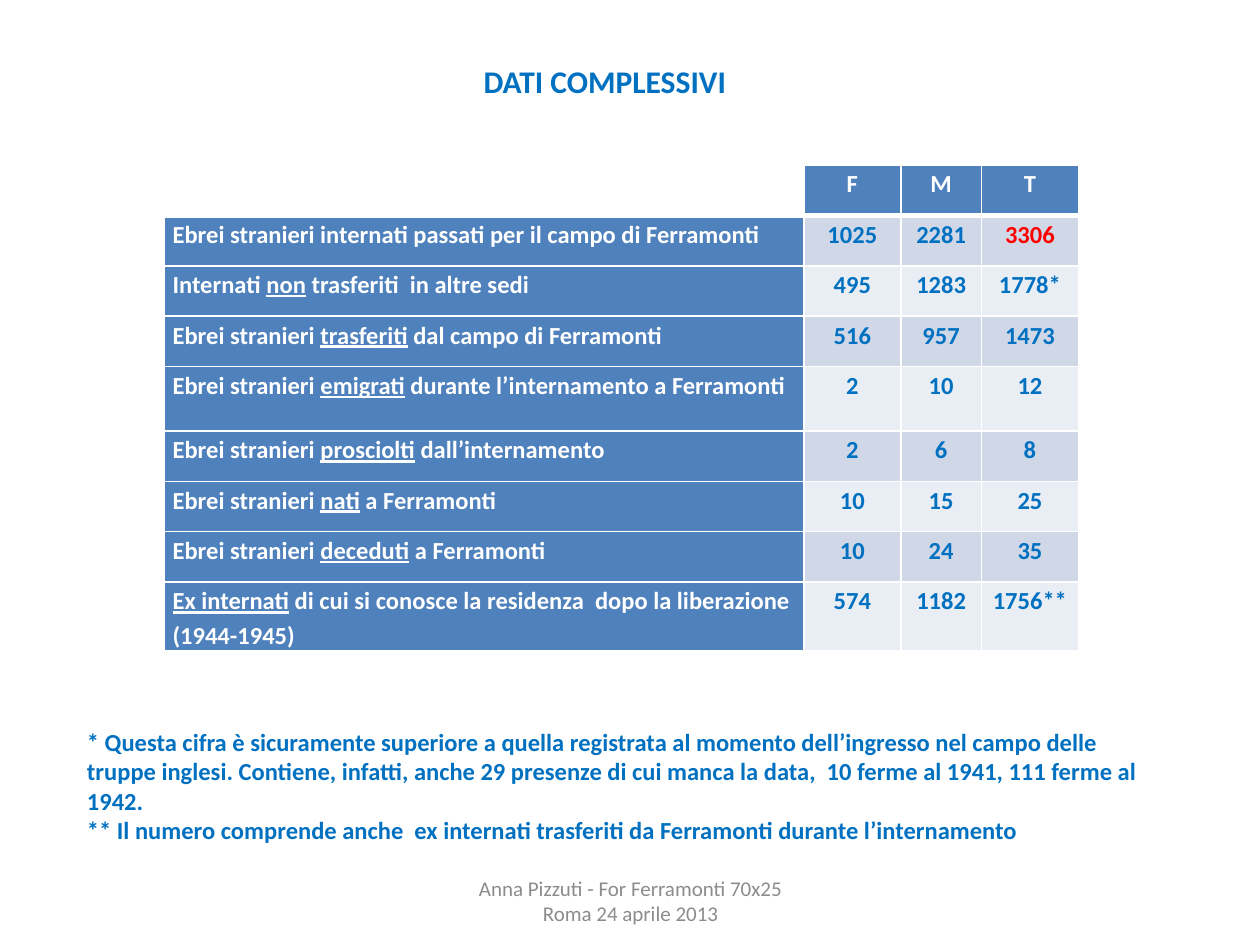
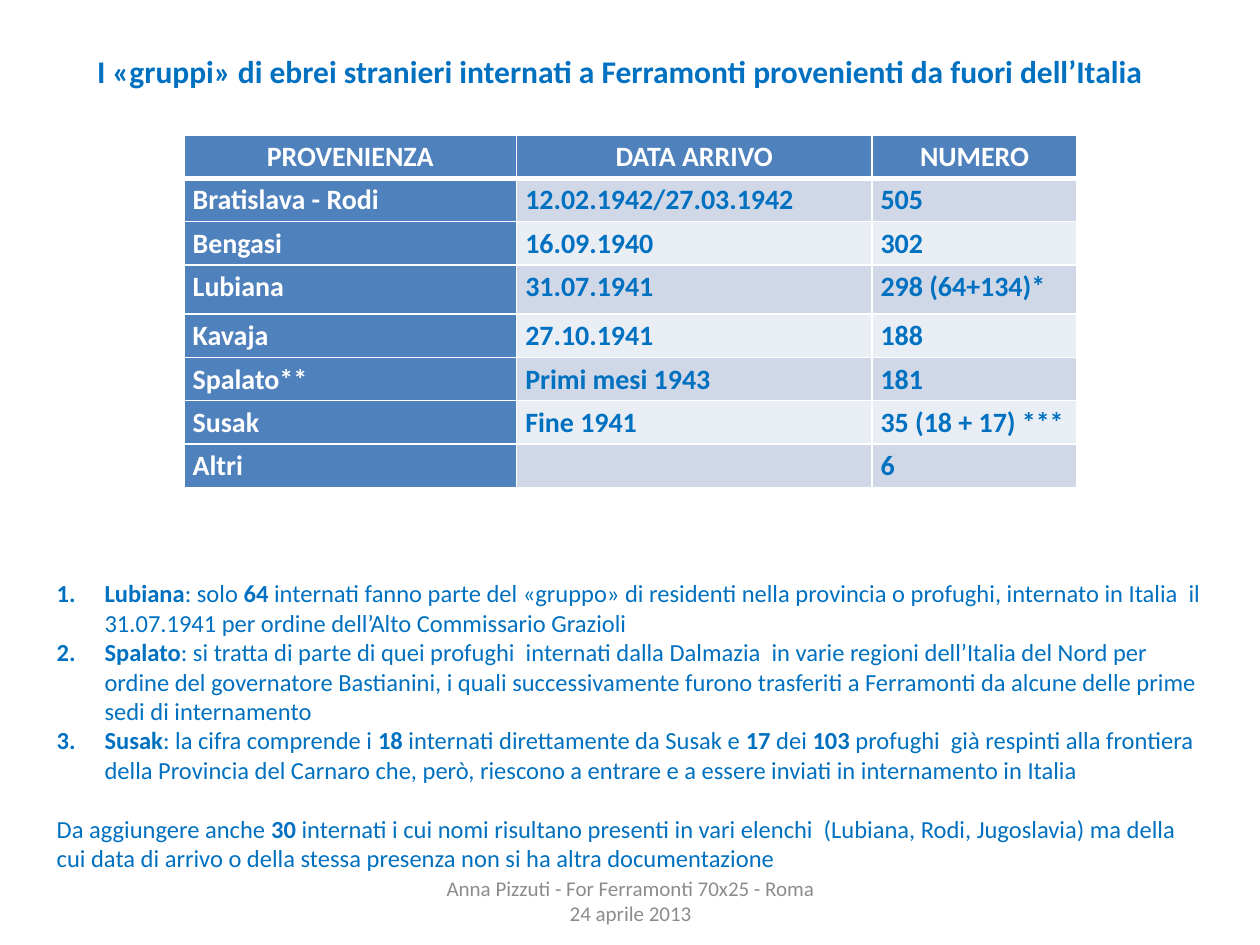
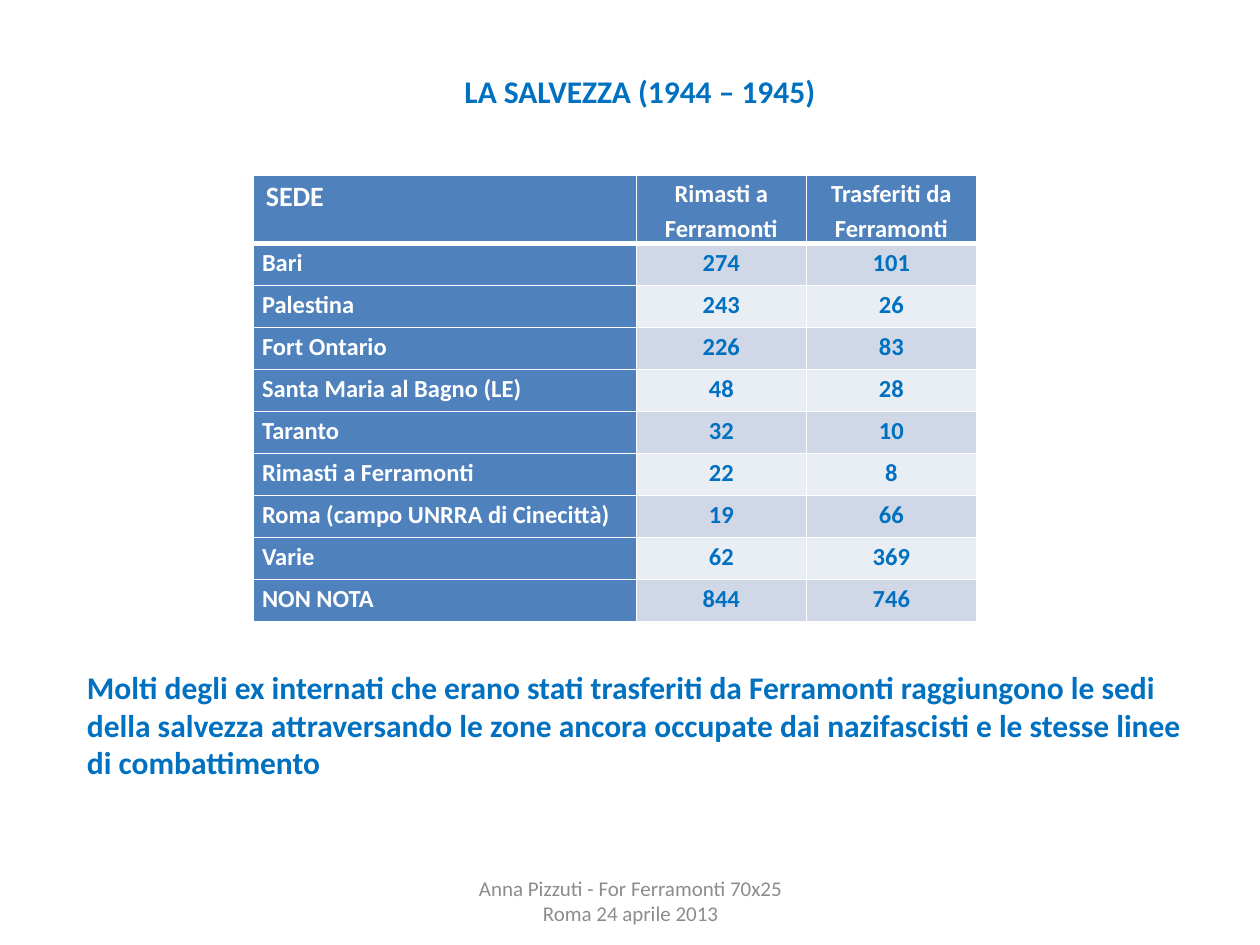
from pptx import Presentation
from pptx.dml.color import RGBColor
from pptx.enum.text import MSO_ANCHOR, MSO_AUTO_SIZE, PP_ALIGN
from pptx.oxml import parse_xml
from pptx.oxml.ns import nsdecls
from pptx.util import Inches, Pt

FONT = "Calibri"
BLUE = "0070C0"
WHITE = "FFFFFF"
RED = "FF0000"
GREY = "8C8C8C"
HEADER = "4F81BD"
BANDS = ("E9EDF4", "D0D8E8")
LEFT, CENTER = PP_ALIGN.LEFT, PP_ALIGN.CENTER


def color(value):
    """Turn a hex string into an RGB colour."""
    return RGBColor.from_string(value)


def write(frame, text, size=14, fill=BLUE, bold=False, underline=False,
          align=LEFT, spacing=1.0, anchor=MSO_ANCHOR.TOP):
    """Fill a frame, one paragraph a line; bars enclose emphasis.

    Emphasis is an underline when underline is True, otherwise bold.
    """
    frame.word_wrap = True
    frame.vertical_anchor = anchor
    for number, line in enumerate(text.split("\n")):
        paragraph = frame.add_paragraph() if number else frame.paragraphs[0]
        paragraph.alignment = align
        paragraph.line_spacing = spacing
        paragraph.space_before = Pt(0)
        for index, part in enumerate(line.split("|")):
            if not part:
                continue
            emphasis = index % 2 == 1
            run = paragraph.add_run()
            run.text = part
            run.font.name = FONT
            run.font.size = Pt(size)
            run.font.color.rgb = color(fill)
            run.font.bold = bold or (emphasis and not underline)
            run.font.underline = emphasis and underline


# Boxes are left, top, width, height in inches.
pages = [
    {
        "title": "DATI COMPLESSIVI",
        "title_box": (1.69, 0.44, 6.22, 0.4),
        "title_align": CENTER,
        "table_at": (1.3, 1.31),
        "columns": (5.08, 0.77, 0.64, 0.77),
        "row_heights": [0.4] * 4 + [0.51] + [0.4] * 3 + [0.54],
        "cell_size": 14,
        "cell_align": CENTER,
        "rows": [
            ("", "F", "M", "T"),
            ("Ebrei stranieri internati passati per il campo di Ferramonti",
             "1025", "2281", "3306"),
            ("Internati |non| trasferiti  in altre sedi",
             "495", "1283", "1778*"),
            ("Ebrei stranieri |trasferiti| dal campo di Ferramonti",
             "516", "957", "1473"),
            ("Ebrei stranieri |emigrati| durante l’internamento a Ferramonti",
             "2", "10", "12"),
            ("Ebrei stranieri |prosciolti| dall’internamento", "2", "6", "8"),
            ("Ebrei stranieri |nati| a Ferramonti", "10", "15", "25"),
            ("Ebrei stranieri |deceduti| a Ferramonti", "10", "24", "35"),
            ("|Ex internati| di cui si conosce la residenza  dopo la "
             "liberazione (1944-1945)", "574", "1182", "1756**"),
        ],
        "notes": [
            "* Questa cifra è sicuramente superiore a quella registrata al "
            "momento dell’ingresso nel campo delle truppe inglesi. "
            "Contiene, infatti, anche 29 presenze di cui manca la data,  "
            "10 ferme al 1941, 111 ferme al 1942.",
            "** Il numero comprende anche  ex internati trasferiti da "
            "Ferramonti durante l’internamento",
        ],
        "body_box": (0.59, 5.72, 8.66, 1.04),
        "body_size": 14,
        "body_bold": True,
        "numbered": 0,
        "footer": "Anna Pizzuti - For Ferramonti 70x25\nRoma 24 aprile 2013",
    },
    {
        "title": "I «gruppi» di ebrei stranieri internati a Ferramonti "
                 "provenienti da fuori dell’Italia",
        "title_box": (0.67, 0.36, 8.66, 0.71),
        "title_align": LEFT,
        "table_at": (1.46, 1.07),
        "columns": (2.64, 2.82, 1.63),
        "row_heights": [2.41 / 7] * 3 + [0.39] + [2.41 / 7] * 4,
        "cell_size": 16,
        "cell_align": LEFT,
        "rows": [
            ("PROVENIENZA", "DATA ARRIVO", "NUMERO"),
            ("Bratislava - Rodi", "12.02.1942/27.03.1942", "505"),
            ("Bengasi", "16.09.1940", "302"),
            ("Lubiana", "31.07.1941", "298 (64+134)*"),
            ("Kavaja", "27.10.1941", "188"),
            ("Spalato**", "Primi mesi 1943", "181"),
            ("Susak", "Fine 1941", "35 (18 + 17) ***"),
            ("Altri", "", "6"),
        ],
        "notes": [
            "|Lubiana|: solo |64| internati fanno parte del «gruppo» di "
            "residenti nella provincia o profughi, internato in Italia  il "
            "31.07.1941 per ordine dell’Alto Commissario Grazioli",
            "|Spalato|: si tratta di parte di quei profughi  internati "
            "dalla Dalmazia  in varie regioni dell’Italia del Nord per "
            "ordine del governatore Bastianini, i quali successivamente "
            "furono trasferiti a Ferramonti da alcune delle prime sedi di "
            "internamento",
            "|Susak|: la cifra comprende i |18| internati direttamente da "
            "Susak e |17| dei |103| profughi  già respinti alla frontiera "
            "della Provincia del Carnaro che, però, riescono a entrare e a "
            "essere inviati in internamento in Italia",
            "Da aggiungere anche |30| internati i cui nomi risultano "
            "presenti in vari elenchi  (Lubiana, Rodi, Jugoslavia) ma "
            "della cui data di arrivo o della stessa presenza non si ha "
            "altra documentazione",
        ],
        "body_box": (0.35, 4.54, 9.29, 2.45),
        "body_size": 14,
        "body_bold": False,
        "numbered": 3,
        "footer": "Anna Pizzuti - For Ferramonti 70x25 - Roma 24 aprile 2013",
    },
    {
        "title": "LA SALVEZZA (1944 – 1945)",
        "title_box": (2.64, 0.52, 4.88, 0.4),
        "title_align": CENTER,
        "table_at": (2.01, 1.39),
        "columns": (3.04, 1.35, 1.35),
        "row_heights": [0.54] + [3 / 9] * 9,
        "cell_size": 14,
        "cell_align": CENTER,
        "rows": [
            ("SEDE", "Rimasti a Ferramonti", "Trasferiti da Ferramonti"),
            ("Bari", "274", "101"),
            ("Palestina", "243", "26"),
            ("Fort Ontario", "226", "83"),
            ("Santa Maria al Bagno (LE)", "48", "28"),
            ("Taranto", "32", "10"),
            ("Rimasti a Ferramonti", "22", "8"),
            ("Roma (campo UNRRA di Cinecittà)", "19", "66"),
            ("Varie", "62", "369"),
            ("NON NOTA", "844", "746"),
        ],
        "notes": [
            "Molti degli ex internati che erano stati trasferiti da "
            "Ferramonti raggiungono le sedi della salvezza attraversando "
            "le zone ancora occupate dai nazifascisti e le stesse linee "
            "di combattimento",
        ],
        "body_box": (0.59, 5.25, 8.9, 1.31),
        "body_size": 18,
        "body_bold": True,
        "numbered": 0,
        "footer": "Anna Pizzuti - For Ferramonti 70x25\nRoma 24 aprile 2013",
    },
]

presentation = Presentation()
presentation.slide_width = Inches(10)
presentation.slide_height = Inches(7.5)

for page in pages:
    slide = presentation.slides.add_slide(presentation.slide_layouts[1])
    title, body = slide.placeholders
    footer = slide.shapes.add_textbox(0, 0, 0, 0)
    boxes = ((title, page["title_box"]), (body, page["body_box"]),
             (footer, (3.42, 6.95, 3.17, 0.4)))
    for shape, box in boxes:
        shape.left, shape.top, shape.width, shape.height = map(Inches, box)
        shape.text_frame.auto_size = MSO_AUTO_SIZE.NONE

    write(title.text_frame, page["title"], size=18, bold=True,
          align=page["title_align"])
    write(body.text_frame, "\n".join(page["notes"]), size=page["body_size"],
          bold=page["body_bold"])
    write(footer.text_frame, page["footer"], size=12, fill=GREY,
          align=CENTER, anchor=MSO_ANCHOR.MIDDLE)

    # Numbered notes hang; the others start flush without a bullet.
    for index, paragraph in enumerate(body.text_frame.paragraphs):
        numbered = index < page["numbered"]
        indent = Inches(0.38) if numbered else 0
        bullet = 'buAutoNum type="arabicPeriod"' if numbered else "buNone"
        properties = paragraph._p.get_or_add_pPr()
        properties.set("marL", str(indent))
        properties.set("indent", str(-indent))
        bullet_name = bullet.split()[0]
        properties.append(parse_xml(
            bullet.replace(bullet_name, f"<a:{bullet_name} {nsdecls('a')}")
            + "/>"))
        if page["numbered"] and not numbered:
            paragraph.space_before = Pt(17)

    rows, columns = page["rows"], page["columns"]
    heights = page["row_heights"]
    left, top = page["table_at"]
    table = slide.shapes.add_table(
        len(rows), len(columns), Inches(left), Inches(top),
        Inches(sum(columns)), Inches(sum(heights))).table
    for column, width in zip(table.columns, columns):
        column.width = Inches(width)
    for row, height in zip(table.rows, heights):
        row.height = Inches(height)

    for row_index, row in enumerate(rows):
        for column_index, text in enumerate(row):
            cell = table.cell(row_index, column_index)
            is_header = row_index == 0
            is_label = column_index == 0
            is_heading = is_header or is_label
            cell.margin_left = cell.margin_right = Inches(0.07)
            cell.margin_top = cell.margin_bottom = 0

            cell.fill.solid()
            background = HEADER if is_heading else BANDS[row_index % 2]
            if is_header and not text:
                background = WHITE
            cell.fill.fore_color.rgb = color(background)

            size, align = page["cell_size"], page["cell_align"]
            if is_header:
                align = CENTER
            if is_label and text != "PROVENIENZA":
                align = LEFT
            if text == "SEDE":
                size = 16
                cell.margin_left = Inches(0.1)
            ink = WHITE if is_heading else RED if text == "3306" else BLUE
            write(cell.text_frame, text, size=size, fill=ink, bold=True,
                  underline=True, align=align, spacing=1.15)

            # A thick rule parts the header from the rows below.
            widths = {"lnL": 1, "lnR": 1, "lnT": 3 if row_index == 1 else 1,
                      "lnB": 3 if is_header else 1}
            for position, (side, width) in enumerate(widths.items()):
                border = parse_xml(
                    f'<a:{side} {nsdecls("a")} w="{Pt(width)}"><a:solidFill>'
                    f'<a:srgbClr val="{WHITE}"/></a:solidFill></a:{side}>')
                cell._tc.get_or_add_tcPr().insert(position, border)

presentation.save("out.pptx")
